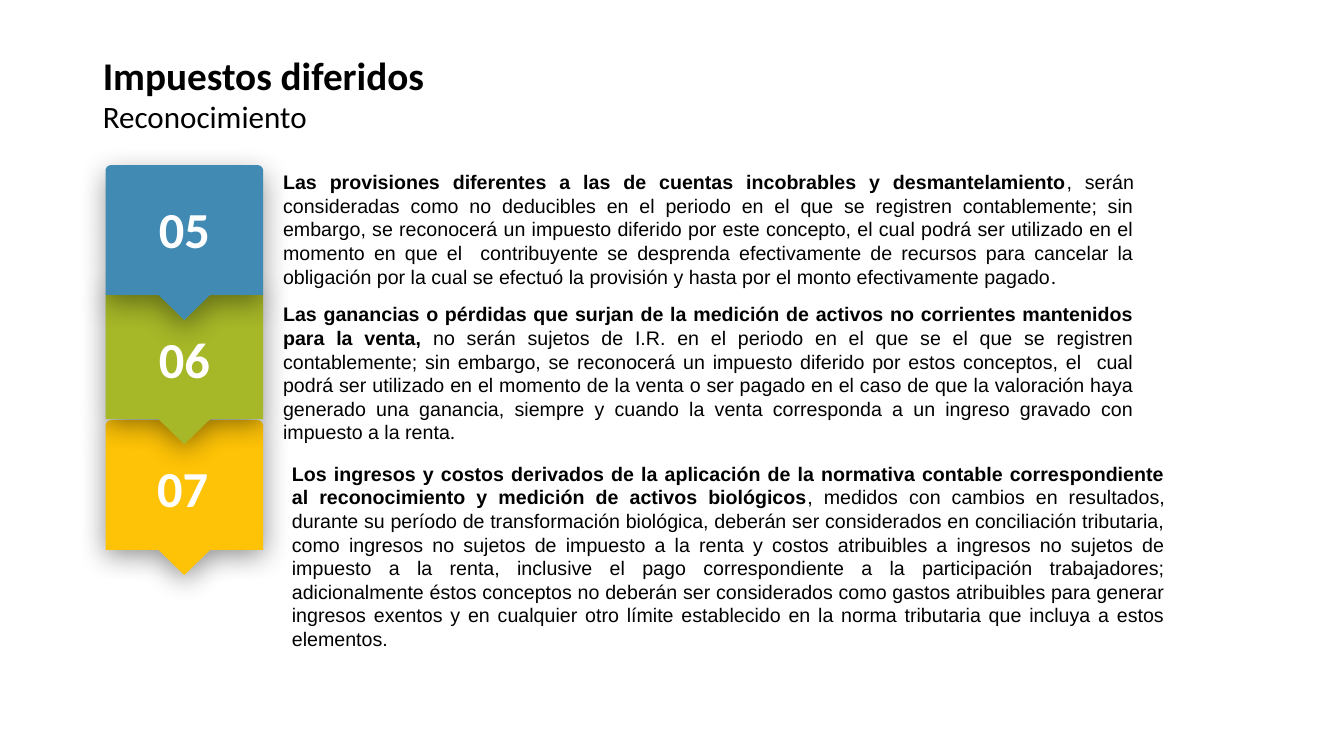
from math import cos, pi, sin

from lxml.etree import SubElement
from pptx import Presentation
from pptx.dml.color import RGBColor
from pptx.enum.text import MSO_ANCHOR as Anchor, MSO_AUTO_SIZE as AutoSize, PP_ALIGN as Align
from pptx.oxml.ns import qn
from pptx.util import Pt


def color(hex_value):
    return RGBColor.from_string(hex_value)


def write(box, place, runs, frame_format, paragraph_format):
    """Place a box and fill its single paragraph with (text, font values, colour) runs."""
    for side, value in zip(("left", "top", "width", "height"), place):
        setattr(box, side, Pt(value))
    for name, value in {"word_wrap": True, "auto_size": AutoSize.NONE, **frame_format}.items():
        setattr(box.text_frame, name, value)
    paragraph = box.text_frame.paragraphs[0]
    for name, value in paragraph_format.items():
        setattr(paragraph, name, value)
    for text, font_format, hex_value in runs:
        run = paragraph.add_run()
        run.text = text
        for name, value in font_format.items():
            setattr(run.font, name, value)
        run.font.color.rgb = color(hex_value)
    return paragraph


prs = Presentation()
prs.slide_width, prs.slide_height = Pt(960), Pt(540)
slide = prs.slides.add_slide(prs.slide_layouts[1])
shapes = slide.shapes

# Title and subtitle
heading, subheading = slide.placeholders
write(heading, (66.25, 36.7, 474.5, 46),
      [("Impuestos diferidos", {"size": Pt(28), "name": "Calibri", "bold": True}, "000000")],
      {"vertical_anchor": Anchor.TOP}, {"alignment": Align.LEFT, "line_spacing": 0.9})
subtitle = write(subheading, (66.25, 72, 404.6, 28),
                 [("Reconocimiento", {"size": Pt(22.2), "name": "Calibri", "bold": False}, "000000")],
                 {"vertical_anchor": Anchor.MIDDLE},
                 {"alignment": Align.LEFT, "line_spacing": 0.7, "space_before": Pt(0)})
subtitle_props = subtitle._p.get_or_add_pPr()
subtitle_props.set("marL", "0")
subtitle_props.set("indent", "0")
SubElement(subtitle_props, qn("a:buNone"))

# Numbered rules: tab top, fill, shadow (alpha %, distance), number place, text place, wording
rules = [
    ("05", 118, "418AB3", (40, 6), (90, 138.2), (195.1, 118, 622, 92.2),
     "Las provisiones diferentes a las de cuentas incobrables y desmantelamiento",
     ", serán consideradas como no deducibles en el periodo en el que se registren contablemente; "
     "sin embargo, se reconocerá un impuesto diferido por este concepto, el cual podrá ser utilizado "
     "en el momento en que el  contribuyente se desprenda efectivamente de recursos para cancelar la "
     "obligación por la cual se efectuó la provisión y hasta por el monto efectivamente pagado", "."),
    ("06", 206.8, "A6B727", (43, 4), (90, 231.1), (195.1, 212.4, 622, 108.7),
     "Las ganancias o pérdidas que surjan de la medición de activos no corrientes mantenidos "
     "para la venta, ",
     "no serán sujetos de I.R. en el periodo en el que se el que se registren contablemente; "
     "sin embargo, se reconocerá un impuesto diferido por estos conceptos, el  cual podrá ser "
     "utilizado en el momento de la venta o ser pagado en el caso de que la valoración haya generado "
     "una ganancia, siempre y cuando la venta corresponda a un ingreso gravado con impuesto a la renta",
     "."),
    ("07", 300.2, "FEC306", (43, 4), (88.8, 322.6), (201.4, 326.2, 638, 126),
     "Los ingresos y costos derivados de la aplicación de la normativa contable correspondiente "
     "al reconocimiento y medición de activos biológicos",
     ", medidos con cambios en resultados, durante su período de transformación biológica, deberán "
     "ser considerados en conciliación tributaria, como ingresos no sujetos de impuesto a la renta y "
     "costos atribuibles a ingresos no sujetos de impuesto a la renta, inclusive el pago "
     "correspondiente a la participación trabajadores; adicionalmente éstos conceptos no deberán ser "
     "considerados como gastos atribuibles para generar ingresos exentos y en cualquier otro límite "
     "establecido en la norma tributaria que incluya a estos elementos.", ""),
]

# Tabs with rounded top corners and a pointer, lowest first so each overlaps the next
TAB_LEFT, TAB_WIDTH, SHOULDER, TIP, NOTCH, RADIUS = 75.4, 112.6, 92.7, 110.6, 18.4, 4
tab_right, tab_center = TAB_LEFT + TAB_WIDTH, TAB_LEFT + TAB_WIDTH / 2
for _, top, fill, (alpha, distance), *_ in reversed(rules):
    outline = [(tab_center + NOTCH, top + SHOULDER), (tab_center, top + TIP),
               (tab_center - NOTCH, top + SHOULDER), (TAB_LEFT, top + SHOULDER)]
    for corner_x, start in ((TAB_LEFT + RADIUS, pi), (tab_right - RADIUS, 1.5 * pi)):
        for step in range(7):
            angle = start + step * pi / 12
            outline.append((corner_x + RADIUS * cos(angle), top + RADIUS + RADIUS * sin(angle)))
    builder = shapes.build_freeform(Pt(tab_right), Pt(top + SHOULDER))
    builder.add_line_segments([(Pt(x), Pt(y)) for x, y in outline], close=True)
    tab = builder.convert_to_shape()
    tab.fill.solid()
    tab.fill.fore_color.rgb = color(fill)
    tab.line.fill.background()
    tab.shadow.inherit = False
    shadow = SubElement(tab._element.spPr.find(qn("a:effectLst")), qn("a:outerShdw"),
                        blurRad=str(Pt(20)), dist=str(Pt(distance)), dir="5400000",
                        algn="t", rotWithShape="0")
    shade = SubElement(shadow, qn("a:srgbClr"), val="000000")
    SubElement(shade, qn("a:alpha"), val=str(alpha * 1000))

# Rule texts and tab numbers
for number, _, _, _, number_place, text_place, lead, detail, stop in rules:
    body = {"size": Pt(14), "name": "Arial", "bold": False}
    runs = [(lead, {**body, "bold": True}, "000000"), (detail, body, "000000")]
    if stop:
        runs.append((stop, {**body, "name": "Calibri"}, "000000"))
    write(shapes.add_textbox(0, 0, 0, 0), text_place, runs, {},
          {"alignment": Align.JUSTIFY, "line_spacing": Pt(16.85)})
    write(shapes.add_textbox(0, 0, 0, 0), (*number_place, 83.5, 51),
          [(number, {"size": Pt(36), "name": "Calibri", "bold": True}, "FFFFFF")],
          {}, {"alignment": Align.CENTER})

prs.save("out.pptx")
